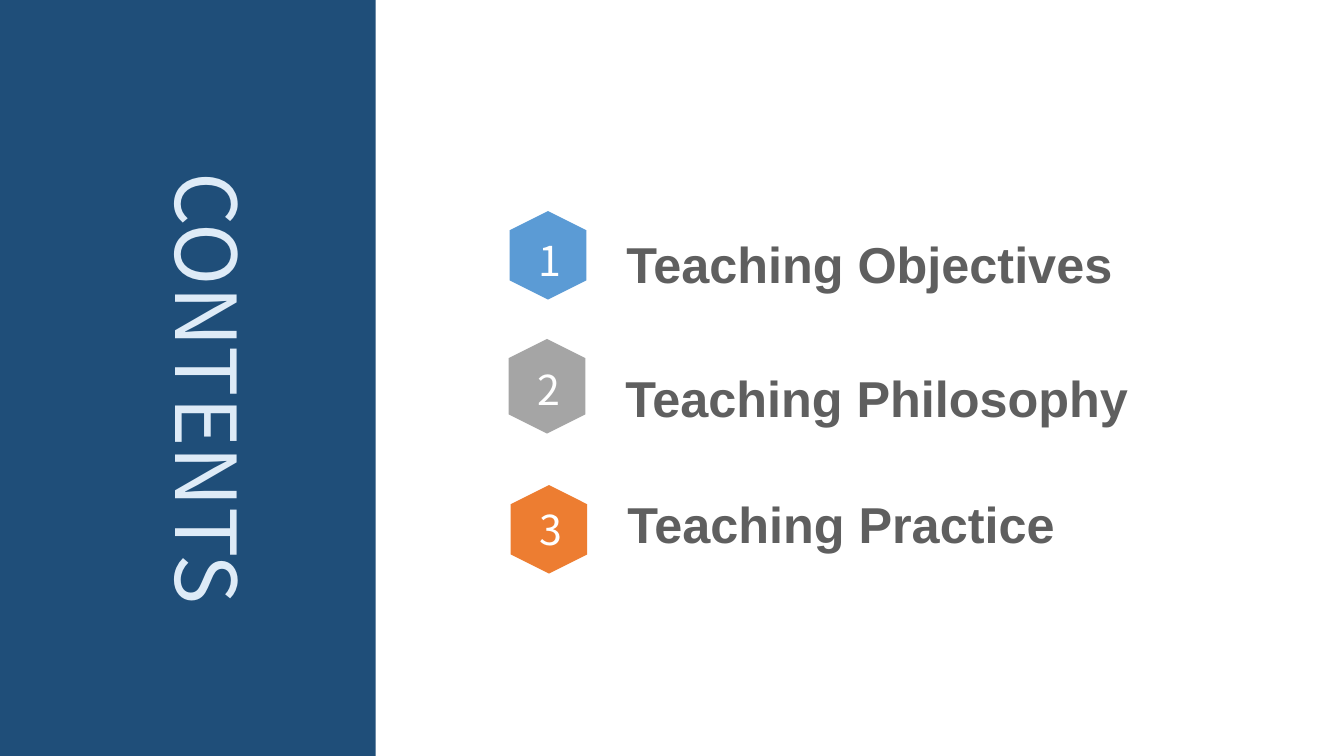
from pptx import Presentation
from pptx.dml.color import RGBColor
from pptx.enum.shapes import MSO_SHAPE
from pptx.enum.text import MSO_AUTO_SIZE, PP_ALIGN
from pptx.util import Pt

RECT, HEX = MSO_SHAPE.RECTANGLE, MSO_SHAPE.HEXAGON
GROW = MSO_AUTO_SIZE.SHAPE_TO_FIT_TEXT
LEFT, MID = PP_ALIGN.LEFT, PP_ALIGN.CENTER
SANS, NOTO = "Arial", "Noto Sans CJK SC"

# Left, top and height of the badge, tops of number and label, colour, label
ITEMS = [
    (364.1, 150.8, 63.2, 154.1, 154.1, "5B9BD5", "Teaching Objectives"),
    (363.4, 242.1, 67.6, 246.2, 249.8, "A5A5A5", "Teaching Philosophy"),
    (364.8, 346.5, 63.2, 346.3, 339.8, "ED7D31", "Teaching Practice"),
]


def paint(color, hue):
    color.rgb = RGBColor.from_string(hue)


def add_block(slide, kind, box, hue):
    shape = slide.shapes.add_shape(kind, *map(Pt, box))
    shape.shadow.inherit = False
    shape.fill.solid()
    paint(shape.fill.fore_color, hue)
    shape.line.fill.background()
    return shape


def add_text(slide, box, text, size, hue, face=NOTO, bold=False,
             align=MID, lead=1.3):
    area = slide.shapes.add_textbox(*map(Pt, box))
    frame = area.text_frame
    frame.word_wrap = True
    frame.auto_size = GROW
    para = frame.paragraphs[0]
    para.alignment, para.line_spacing = align, lead
    run = para.add_run()
    run.text = text
    run.font.name, run.font.size, run.font.bold = face, Pt(size), bold
    paint(run.font.color, hue)
    return area


# Dark band with the sideways title
def add_band(slide, x, y, w, h):
    add_block(slide, RECT, (x, y, w, h), "1F4E79")
    title = add_text(slide, (x - 27.4, y + 226.8, 374.4, 101.5),
                     "CONTENTS", 60, "DEEBF7")
    title.rotation = 90


# Numbered badge with its label
def add_item(slide, num, x, y, high, num_top, label_top, hue, label):
    wide = 54.7
    # The hexagon stands on its point, so its sides swap before turning
    box = (x + (wide - high) / 2, y + (high - wide) / 2, high, wide)
    badge = add_block(slide, HEX, box, hue)
    badge.rotation = 270
    add_text(slide, (x + 0.3, num_top, 56.9, 53.3), str(num), 29.4, "FFFFFF")
    add_text(slide, (x + 76.2, label_top, 450, 59.8), label, 36, "5F5F5F",
             SANS, True, LEFT, 1.2)


def main():
    deck = Presentation()
    deck.slide_width, deck.slide_height = Pt(960), Pt(540)
    slide = deck.slides.add_slide(deck.slide_layouts[6])
    add_band(slide, 0, 0, 268.4, 540)
    for num, item in enumerate(ITEMS, 1):
        add_item(slide, num, *item)
    deck.save("out.pptx")


if __name__ == "__main__":
    main()
